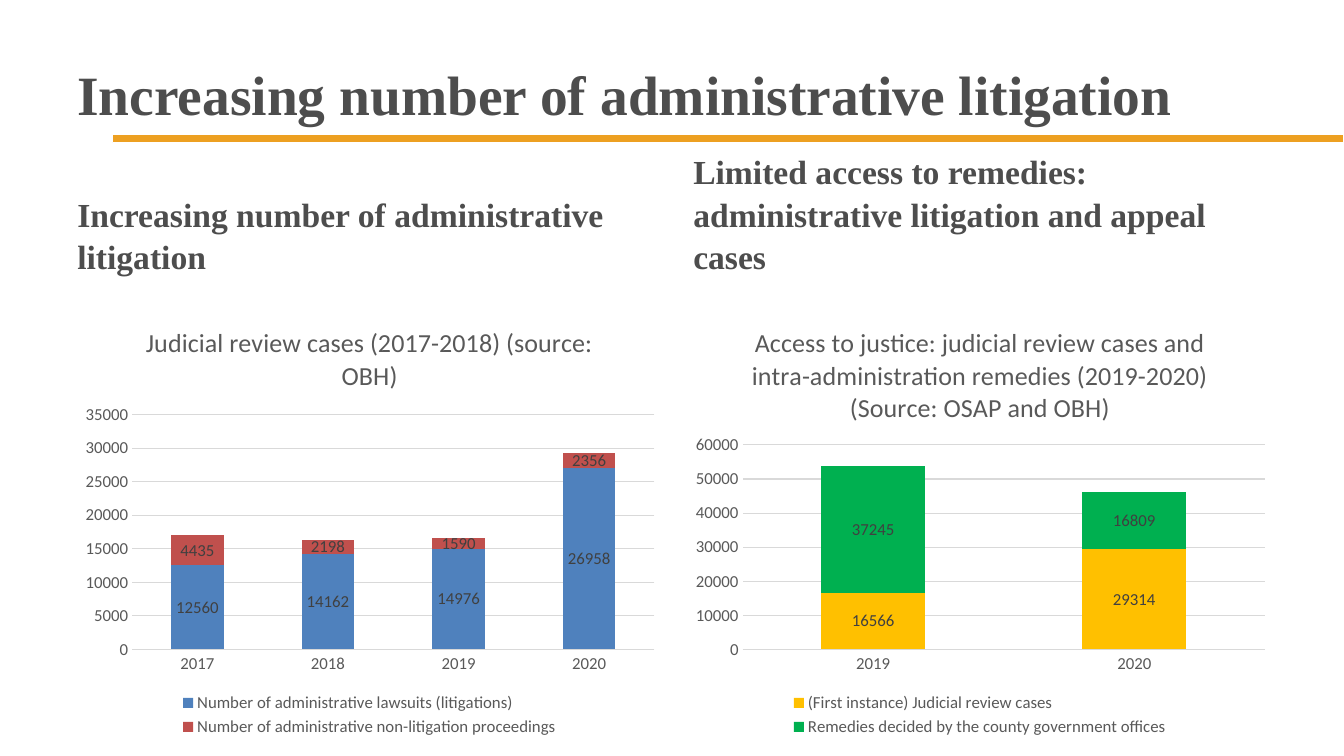
"""Build a slide with two stacked column charts on administrative litigation."""
from lxml import etree
from pptx import Presentation
from pptx import util as u
from pptx.chart.data import CategoryChartData
from pptx.dml.color import RGBColor
from pptx.enum import chart as charts, shapes, text
from pptx.oxml.ns import qn

WIDTH, HEIGHT = u.Inches(13.33), u.Inches(7.5)
COLUMNS, ROWS = 120, 90
COLORS = {
    "heading": "4D4D4D", "bar": "EDA021", "white": "FFFFFF",
    "axis_text": "595959", "label": "404040", "grid": "D9D9D9",
    "blue": "4F81BD", "red": "C0504D", "yellow": "FFC000", "green": "00B050",
}
PANELS = [
    {
        "heading": "Increasing number of administrative litigation",
        "heading_box": (6, 20.16, 54, 13.32),
        "chart_column": 6.5,
        "title": "Judicial review cases (2017-2018) (source: OBH)",
        "plot_top": 0.25,
        "top_value": 35000,
        "step": 5000,
        "categories": ["2017", "2018", "2019", "2020"],
        "series": [
            ("Number of administrative lawsuits (litigations)", "blue",
             [12560, 14162, 14976, 26958]),
            ("Number of administrative non-litigation proceedings", "red",
             [4435, 2198, 1590, 2356]),
        ],
    },
    {
        "heading": "Limited access to remedies: administrative litigation and appeal cases",
        "heading_box": (61, 20.16, 53, 13.32),
        "chart_column": 61,
        "title": "Access to justice: judicial review cases and "
                 "intra-administration remedies (2019-2020) (Source: OSAP and OBH)",
        "plot_top": 0.32,
        "top_value": 60000,
        "step": 10000,
        "categories": ["2019", "2020"],
        "series": [
            ("(First instance) Judicial review cases", "yellow", [16566, 29314]),
            ("Remedies decided by the county government offices", "green",
             [37245, 16809]),
        ],
    },
]


def color(name):
    """Return the named colour."""
    return RGBColor.from_string(COLORS[name])


def grid_box(column, row, columns, rows):
    """Turn grid units into left, top, width and height."""
    across, down = WIDTH / COLUMNS, HEIGHT / ROWS
    return [u.Emu(round(length)) for length in
            (column * across, row * down, columns * across, rows * down)]


def style_font(font, name, size, color_name, bold=False):
    """Set the typeface, size, colour and weight of a font."""
    font.name, font.size, font.bold = name, u.Pt(size), bold
    font.color.rgb = color(color_name)


def fill_placeholder(placeholder, content, box, size, anchor, spacing):
    """Move a placeholder and write one heading in it."""
    placeholder.left, placeholder.top, placeholder.width, placeholder.height = grid_box(*box)
    frame = placeholder.text_frame
    frame.text = content
    frame.word_wrap = True
    frame.auto_size = text.MSO_AUTO_SIZE.NONE
    frame.vertical_anchor = anchor
    paragraph = frame.paragraphs[0]
    paragraph.alignment = text.PP_ALIGN.LEFT
    paragraph.line_spacing = spacing
    paragraph.space_before = u.Pt(0)
    style_font(paragraph.font, "Times New Roman", size, "heading", bold=True)


def add_bar(slide):
    """Draw the rule under the title, behind everything else."""
    bar = slide.shapes.add_shape(shapes.MSO_SHAPE.RECTANGLE, *grid_box(10, 16, 110, 1))
    bar.shadow.inherit = False
    bar.fill.solid()
    bar.fill.fore_color.rgb = color("bar")
    bar.line.color.rgb = color("white")
    bar.line.width = u.Pt(0.75)
    slide.shapes._spTree.insert(2, bar._element)


def set_plot_area(chart, top):
    """Fix the inner plot area as shares of the chart."""
    plot_area = chart._chartSpace.chart.plotArea
    for old in plot_area.findall(qn("c:layout")):
        plot_area.remove(old)
    layout = etree.Element(qn("c:layout"))
    manual = etree.SubElement(layout, qn("c:manualLayout"))
    settings = {"layoutTarget": "inner", "xMode": "edge", "yMode": "edge",
                "x": 0.1, "y": top, "w": 0.88, "h": round(0.79 - top, 2)}
    for tag, value in settings.items():
        etree.SubElement(manual, qn(f"c:{tag}")).set("val", str(value))
    plot_area.insert(0, layout)


def style_axes(chart, top_value, step):
    """Format both axes and the gridlines."""
    for axis in (chart.category_axis, chart.value_axis):
        axis.major_tick_mark = axis.minor_tick_mark = charts.XL_TICK_MARK.NONE
        style_font(axis.tick_labels.font, "Calibri", 12, "axis_text")
    values = chart.value_axis
    values.minimum_scale, values.maximum_scale, values.major_unit = 0, top_value, step
    values.format.line.fill.background()
    for line in (chart.category_axis.format.line, values.major_gridlines.format.line):
        line.color.rgb = color("grid")
        line.width = u.Pt(0.75)


def add_stacked_chart(slide, panel):
    """Add one stacked column chart with title, labels and legend."""
    data = CategoryChartData()
    data.categories = panel["categories"]
    for name, _, values in panel["series"]:
        data.add_series(name, values)
    chart = slide.shapes.add_chart(
        charts.XL_CHART_TYPE.COLUMN_STACKED,
        *grid_box(panel["chart_column"], 36.4, 53, 51.8), data).chart
    chart.font.name, chart.font.size = "Calibri", u.Pt(10)
    title = chart.chart_title
    title.text_frame.text = panel["title"]
    title.include_in_layout = False
    style_font(title.text_frame.paragraphs[0].font, "Calibri", 18.6, "axis_text")
    chart.has_legend = True
    chart.legend.position = charts.XL_LEGEND_POSITION.BOTTOM
    chart.legend.include_in_layout = False
    style_font(chart.legend.font, "Calibri", 12, "axis_text")
    plot = chart.plots[0]
    plot.gap_width, plot.overlap, plot.vary_by_categories = 150, 100, False
    for series, (_, fill, _) in zip(plot.series, panel["series"]):
        series.format.fill.solid()
        series.format.fill.fore_color.rgb = color(fill)
        series.data_labels.show_value = True
        style_font(series.data_labels.font, "Calibri", 12, "label")
    style_axes(chart, panel["top_value"], panel["step"])
    set_plot_area(chart, panel["plot_top"])


def main():
    """Assemble and save the slide."""
    presentation = Presentation()
    presentation.slide_width, presentation.slide_height = WIDTH, HEIGHT
    slide = presentation.slides.add_slide(
        presentation.slide_layouts.get_by_name("Comparison"))
    title, left, left_content, right, right_content = slide.placeholders
    for unused in (left_content, right_content):
        unused._element.getparent().remove(unused._element)
    add_bar(slide)
    fill_placeholder(title, "Increasing number of administrative litigation",
                     (6, 3.6, 108, 15), 39.6, text.MSO_ANCHOR.MIDDLE, 1)
    for placeholder, panel in zip((left, right), PANELS):
        fill_placeholder(placeholder, panel["heading"], panel["heading_box"],
                         24, text.MSO_ANCHOR.BOTTOM, 1.05)
        add_stacked_chart(slide, panel)
    presentation.save("out.pptx")


if __name__ == "__main__":
    main()
